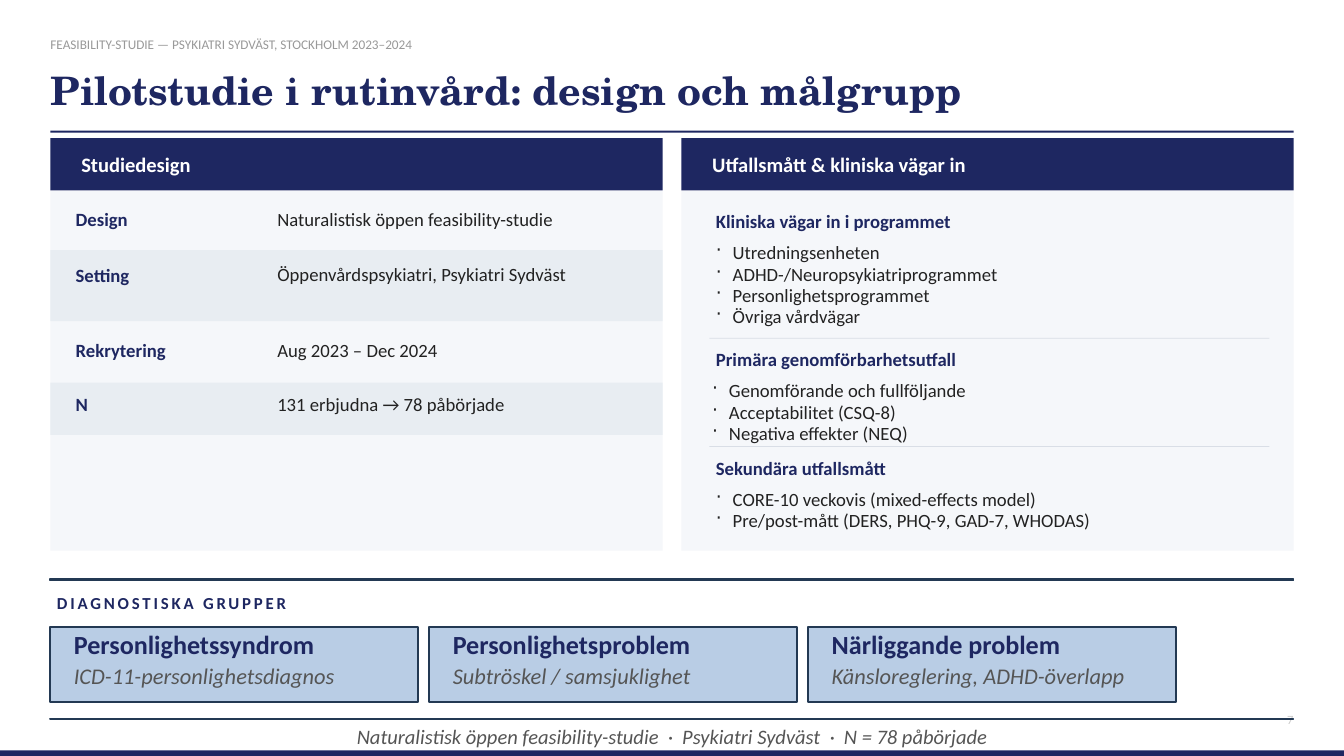
from lxml import etree
from pptx import Presentation
from pptx.dml.color import RGBColor
from pptx.enum.shapes import MSO_SHAPE
from pptx.enum.text import MSO_ANCHOR, MSO_AUTO_SIZE, PP_ALIGN
from pptx.oxml.ns import qn
from pptx.util import Pt

RECT = MSO_SHAPE.RECTANGLE
TOP, MIDDLE = MSO_ANCHOR.TOP, MSO_ANCHOR.MIDDLE
LEFT, CENTER, RIGHT = PP_ALIGN.LEFT, PP_ALIGN.CENTER, PP_ALIGN.RIGHT

EYEBROW = "FEASIBILITY-STUDIE — PSYKIATRI SYDVÄST, STOCKHOLM 2023–2024"
TITLE = "Pilotstudie i rutinvård: design och målgrupp"
PANEL_HEADINGS = ["Studiedesign", "Utfallsmått & kliniska vägar in"]
DESIGN_ROWS = [
    {"label": "Design", "value": "Naturalistisk öppen feasibility-studie",
     "height": 64, "label_dy": 18, "value_dy": 18},
    {"label": "Setting", "value": "Öppenvårdspsykiatri, Psykiatri Sydväst",
     "height": 76, "label_dy": 14, "value_dy": 12},
    {"label": "Rekrytering", "value": "Aug 2023 – Dec 2024",
     "height": 66, "label_dy": 18, "value_dy": 18},
    {"label": "N", "value": "131 erbjudna → 78 påbörjade",
     "height": 56, "label_dy": 10, "value_dy": 10},
]
OUTCOMES = [
    {"heading": "Kliniska vägar in i programmet", "top": 224, "list_dx": 0,
     "items": ["Utredningsenheten", "ADHD-/Neuropsykiatriprogrammet",
               "Personlighetsprogrammet", "Övriga vårdvägar"]},
    {"heading": "Primära genomförbarhetsutfall", "top": 372, "list_dx": -4,
     "items": ["Genomförande och fullföljande", "Acceptabilitet (CSQ-8)",
               "Negativa effekter (NEQ)"]},
    {"heading": "Sekundära utfallsmått", "top": 488, "list_dx": 0,
     "items": ["CORE-10 veckovis (mixed-effects model)",
               "Pre/post-mått (DERS, PHQ-9, GAD-7, WHODAS)"]},
]
GROUPS_LABEL = "DIAGNOSTISKA GRUPPER"
GROUPS = [
    ("Personlighetssyndrom", "ICD-11-personlighetsdiagnos"),
    ("Personlighetsproblem", "Subtröskel / samsjuklighet"),
    ("Närliggande problem", "Känsloreglering, ADHD-överlapp"),
]
FOOTER = "Naturalistisk öppen feasibility-studie  ·  Psykiatri Sydväst  ·  N = 78 påbörjade"
PAGE_NUMBER = "7"

THEME = {
    "colors": {"navy": "1E2761", "panel": "F5F7FA", "band": "E8EDF2",
               "divider": "D9DEE6", "rule": "4F81BD", "outline": "233953",
               "card": "B9CDE5"},
    "styles": {
        "eyebrow": {"size": 14.2, "color": "999999", "line": 17.1},
        "title": {"size": 42, "color": "1E2761", "line": 50.4, "bold": True,
                  "font": "TeX Gyre Schola"},
        "page": {"size": 13.5, "color": "CCCCCC", "line": 16.2},
        "panel": {"size": 22, "color": "FFFFFF", "line": 26.4, "bold": True},
        "label": {"size": 20, "color": "1E2761", "line": 21.6, "bold": True},
        "value": {"size": 20, "color": "222222", "line": 21.6},
        "item": {"size": 20, "color": "222222", "line": 22.8},
        "groups": {"size": 18, "color": "1E2761", "line": 21.6, "bold": True,
                   "tracking": 3},
        "card": {"size": 28, "color": "1E2761", "line": 21.6, "bold": True},
        "card_note": {"size": 24, "color": "555555", "line": 19.2, "italic": True},
        "footer": {"size": 22, "color": "555555", "line": 26.4, "italic": True},
    },
}

SLIDE_W, SLIDE_H = 1440, 810
MARGIN = 54
CONTENT_W = SLIDE_W - 2 * MARGIN
PANEL_GAP = 20
PANEL_W = (CONTENT_W - PANEL_GAP) / 2
PANEL_TOP, PANEL_HEAD_H, PANEL_BODY_H = 148, 56, 386
BODY_TOP = PANEL_TOP + PANEL_HEAD_H
OUTCOME_X = 760
CARD_TOP, CARD_W, CARD_H, CARD_GAP = 672, 394, 80, 12
BULLET_INDENT = 18


def color(name):
    return RGBColor.from_string(THEME["colors"][name])


def add_bar(slide, x, y, w, h, fill, outline=None):
    bar = slide.shapes.add_shape(RECT, Pt(x), Pt(y), Pt(w), Pt(h))
    bar.shadow.inherit = False
    bar.fill.solid()
    bar.fill.fore_color.rgb = color(fill)
    if outline:
        bar.line.color.rgb = color(outline)
        bar.line.width = Pt(2)
    else:
        bar.line.fill.background()


def write(frame, lines, style_name, align=LEFT, anchor=TOP, inset=True, bullet=None):
    style = THEME["styles"][style_name]
    frame.text = "\n".join(lines)
    frame.word_wrap = True
    frame.auto_size = MSO_AUTO_SIZE.NONE
    frame.vertical_anchor = anchor
    if not inset:
        frame.margin_left = frame.margin_right = 0
        frame.margin_top = frame.margin_bottom = 0
    for paragraph in frame.paragraphs:
        if bullet:
            properties = paragraph._p.get_or_add_pPr()
            properties.set("marL", str(Pt(BULLET_INDENT)))
            properties.set("indent", str(-Pt(BULLET_INDENT)))
            etree.SubElement(properties, qn("a:buChar")).set("char", bullet)
        paragraph.alignment = align
        paragraph.line_spacing = Pt(style["line"])
        for run in paragraph.runs:
            run.font.name = style.get("font", "Calibri")
            run.font.size = Pt(style["size"])
            run.font.bold = style.get("bold", False)
            run.font.italic = style.get("italic", False)
            run.font.color.rgb = RGBColor.from_string(style["color"])
            if "tracking" in style:
                run._r.get_or_add_rPr().set("spc", str(style["tracking"] * 100))


def add_text(slide, x, y, w, h, lines, style_name, **options):
    box = slide.shapes.add_textbox(Pt(x), Pt(y), Pt(w), Pt(h))
    write(box.text_frame, lines, style_name, **options)


def add_header(slide):
    title = slide.shapes.title
    title.left, title.top, title.width, title.height = Pt(MARGIN), Pt(71), Pt(1138), Pt(50)
    write(title.text_frame, [TITLE], "title", inset=False)
    add_text(slide, MARGIN, 39, CONTENT_W, 17, [EYEBROW], "eyebrow", inset=False)
    add_bar(slide, MARGIN, 140, CONTENT_W, 2, "navy")


def add_panels(slide):
    for index, heading in enumerate(PANEL_HEADINGS):
        x = MARGIN + index * (PANEL_W + PANEL_GAP)
        add_bar(slide, x, BODY_TOP, PANEL_W, PANEL_BODY_H, "panel")
        add_bar(slide, x, PANEL_TOP, PANEL_W, PANEL_HEAD_H, "navy")
        add_text(slide, x + 26, PANEL_TOP + 10, 600, 36, [heading], "panel", anchor=MIDDLE)


def add_design_rows(slide):
    y = BODY_TOP
    for index, row in enumerate(DESIGN_ROWS):
        if index % 2:
            add_bar(slide, MARGIN, y, PANEL_W, row["height"], "band")
        add_text(slide, 74, y + row["label_dy"], 200, 36, [row["label"]], "label")
        add_text(slide, 290, y + row["value_dy"], 400, 36, [row["value"]], "value")
        y += row["height"]


def add_outcomes(slide):
    for index, outcome in enumerate(OUTCOMES):
        y, items = outcome["top"], outcome["items"]
        if index:
            add_bar(slide, OUTCOME_X, y - 10, 600, 0.75, "divider")
        add_text(slide, OUTCOME_X, y, 596, 30, [outcome["heading"]], "label")
        add_text(slide, OUTCOME_X + outcome["list_dx"], y + 32, 596, 24 * len(items),
                 items, "item", bullet="·")


def add_groups(slide):
    add_bar(slide, MARGIN, 620, CONTENT_W, 2, "rule", "outline")
    add_text(slide, MARGIN, 632, CONTENT_W, 28, [GROUPS_LABEL], "groups")
    for index, (group, note) in enumerate(GROUPS):
        x = MARGIN + index * (CARD_W + CARD_GAP)
        add_bar(slide, x, CARD_TOP, CARD_W, CARD_H, "card", "outline")
        add_text(slide, x + 18, CARD_TOP + 10, 364, 32, [group], "card")
        add_text(slide, x + 18, CARD_TOP + 44, 364, 28, [note], "card_note")


def add_footer(slide):
    add_bar(slide, 0, SLIDE_H - 6, SLIDE_W, 6, "navy")
    add_text(slide, 1350, 757.5, 36, 26, [PAGE_NUMBER], "page",
             align=RIGHT, anchor=MIDDLE, inset=False)
    add_bar(slide, MARGIN, 770, CONTENT_W, 0.75, "rule", "outline")
    add_text(slide, 120, 772.5, 1200, 32, [FOOTER], "footer", align=CENTER)


def main():
    deck = Presentation()
    deck.slide_width, deck.slide_height = Pt(SLIDE_W), Pt(SLIDE_H)
    slide = deck.slides.add_slide(deck.slide_layouts[5])
    for add_part in (add_header, add_panels, add_design_rows, add_outcomes,
                     add_groups, add_footer):
        add_part(slide)
    deck.save("out.pptx")


if __name__ == "__main__":
    main()
